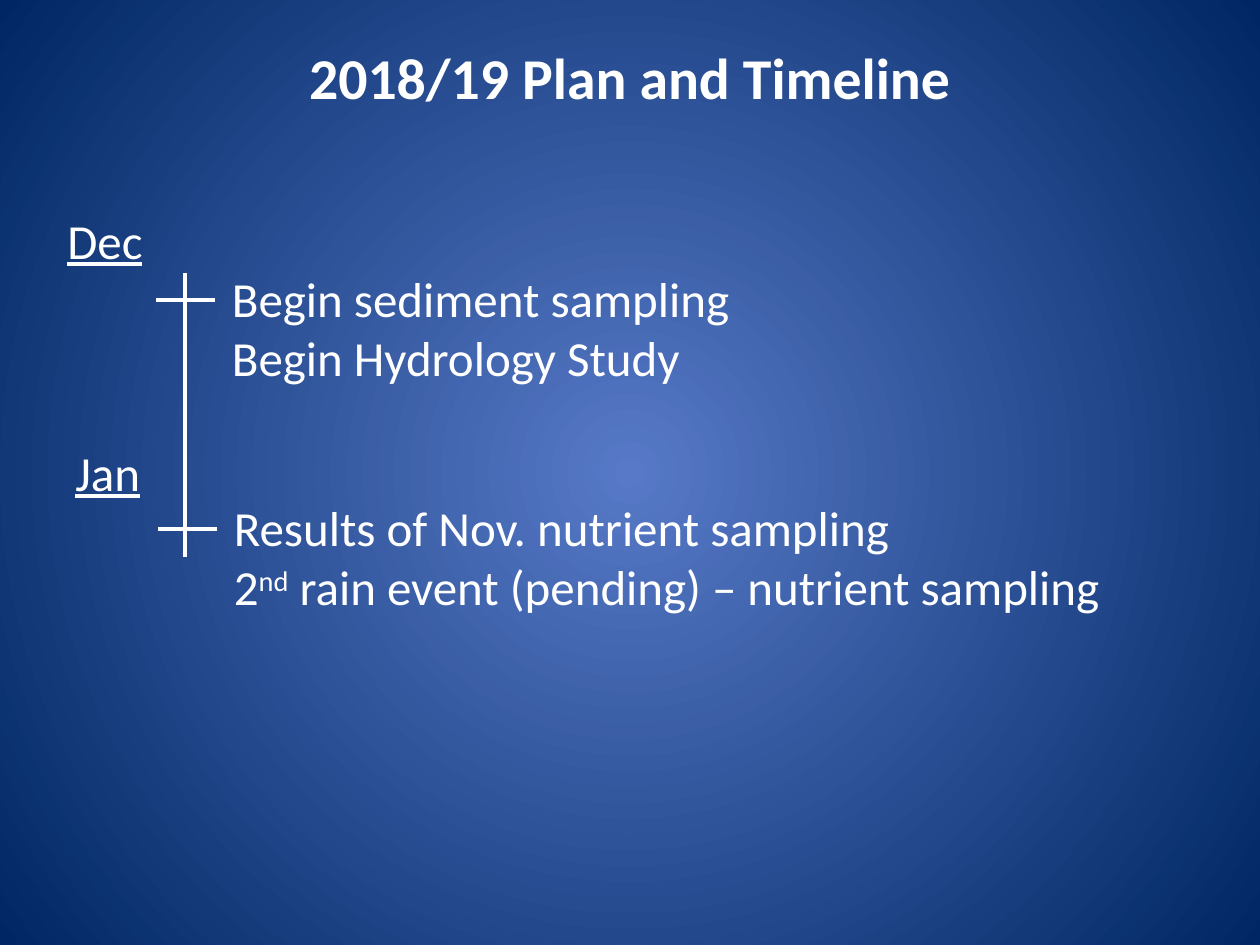
import pptx
import pptx.util
import pptx.dml.color
import pptx.enum.shapes
import pptx.enum.text
import pptx.oxml
import pptx.oxml.ns

PX = 914400 / 126
WHITE = "FFFFFF"


def px(n):
    return pptx.util.Emu(round(n * PX))


def color(code):
    return pptx.dml.color.RGBColor.from_string(code)


def paint(slide):
    """Radial gradient background."""
    fill = slide.background.fill
    fill.gradient()
    for stop, code in zip(fill.gradient_stops, ("5779C7", "002763")):
        stop.color.rgb = color(code)
    lin = next(slide.element.iter(pptx.oxml.ns.qn("a:lin")))
    ring = pptx.oxml.parse_xml(
        f'<a:path {pptx.oxml.ns.nsdecls("a")} path="circle">'
        '<a:fillToRect l="50000" t="50000" r="50000" b="50000"/></a:path>')
    lin.getparent().replace(lin, ring)


def line(slide, x1, y1, x2, y2):
    rule = slide.shapes.add_connector(
        pptx.enum.shapes.MSO_CONNECTOR.STRAIGHT, px(x1), px(y1), px(x2), px(y2))
    rule.line.color.rgb = color(WHITE)
    rule.line.width = pptx.util.Pt(2)
    rule._element.spPr.append(pptx.oxml.parse_xml(
        f'<a:effectLst {pptx.oxml.ns.nsdecls("a")}/>'))


def text(slide, box, rows, size=28, pad=None, bold=None, under=None):
    """Text box; each row is a list of (words, baseline) pairs."""
    shape = slide.shapes.add_textbox(*map(px, box))
    frame = shape.text_frame
    frame.word_wrap = True
    if pad is not None:
        frame.margin_left = frame.margin_right = px(pad)
        frame.margin_top = frame.margin_bottom = px(pad)
    for i, row in enumerate(rows):
        para = frame.paragraphs[0] if i == 0 else frame.add_paragraph()
        for words, base in row:
            run = para.add_run()
            run.text = words
            font = run.font
            font.name, font.size = "Calibri", pptx.util.Pt(size)
            font.bold, font.underline = bold, under
            font.color.rgb = color(WHITE)
            if base:
                font._element.set("baseline", str(base))
    return frame


def title(slide, box, words):
    frame = text(slide, box, [[(words, 0)]], size=33, bold=True)
    frame.vertical_anchor = pptx.enum.text.MSO_ANCHOR.MIDDLE
    frame.paragraphs[0].alignment = pptx.enum.text.PP_ALIGN.CENTER


def month(slide, box, label, name, rows):
    """Tick at the box's left top, tasks beside it, month name above."""
    x, y, wide, high = box
    line(slide, x, y, x + 59, y)
    text(slide, (x + 71, y - 36, wide - 71, high), rows, pad=5)
    text(slide, (*label, 107, 72), [[(name, 0)]], under=True)


def main():
    deck = pptx.Presentation()
    deck.slide_width, deck.slide_height = px(1260), px(945)
    slide = deck.slides.add_slide(deck.slide_layouts[6])
    paint(slide)
    title(slide, (63, 35, 1134, 82), "2018/19 Plan and Timeline")

    # Timeline axis and its months
    line(slide, 185, 273, 185, 557)
    month(slide, (156, 300, 1152, 141), (55, 204), "Dec",
          [[("Begin sediment sampling", 0)], [("Begin Hydrology Study", 0)]])
    month(slide, (158, 529, 1182, 149), (63, 436), "Jan",
          [[("Results of Nov. nutrient sampling", 0)],
           [("2", 0), ("nd", 30000),
            (" rain event (pending) – nutrient sampling", 0)]])
    deck.save("out.pptx")


if __name__ == "__main__":
    main()
